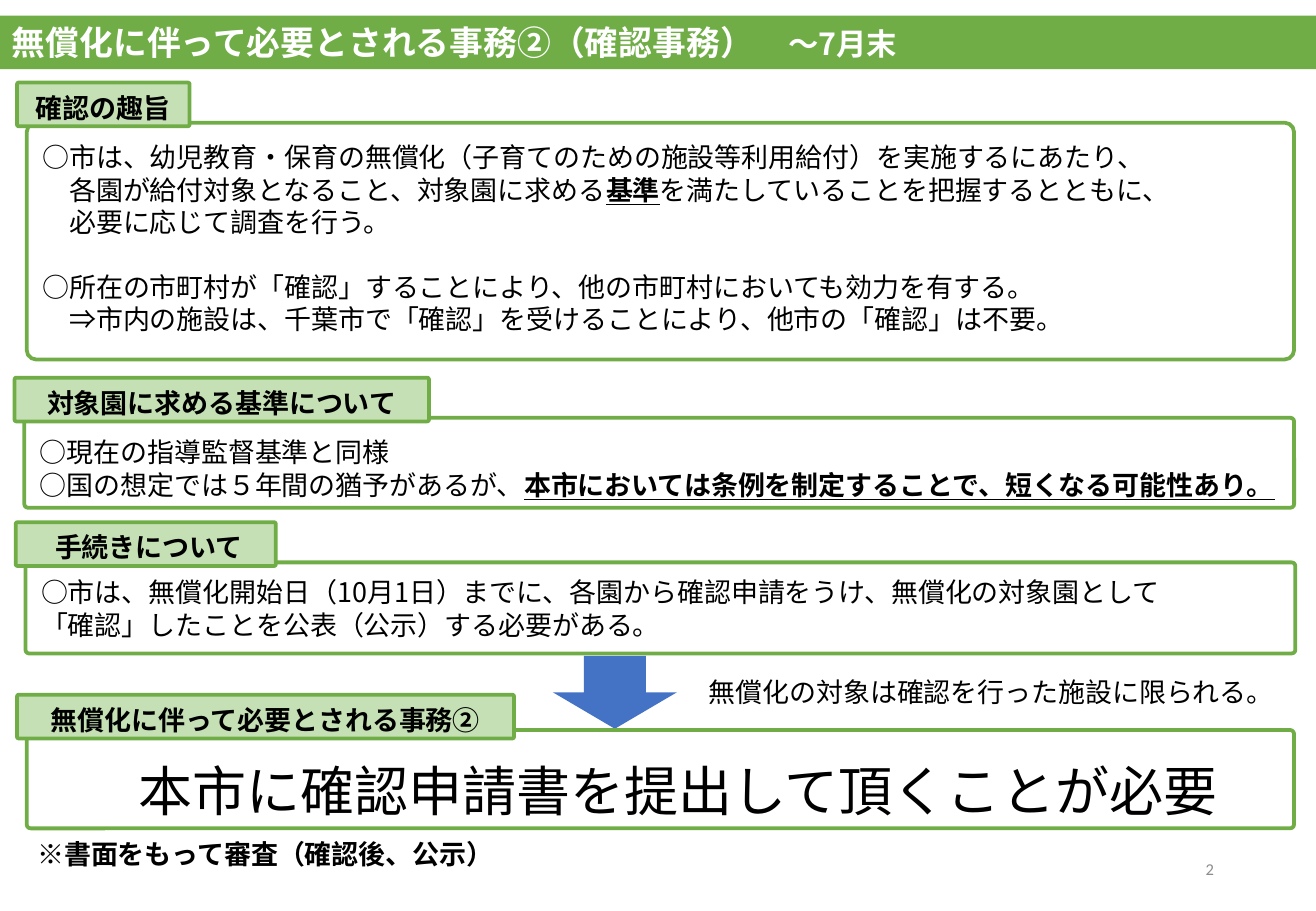
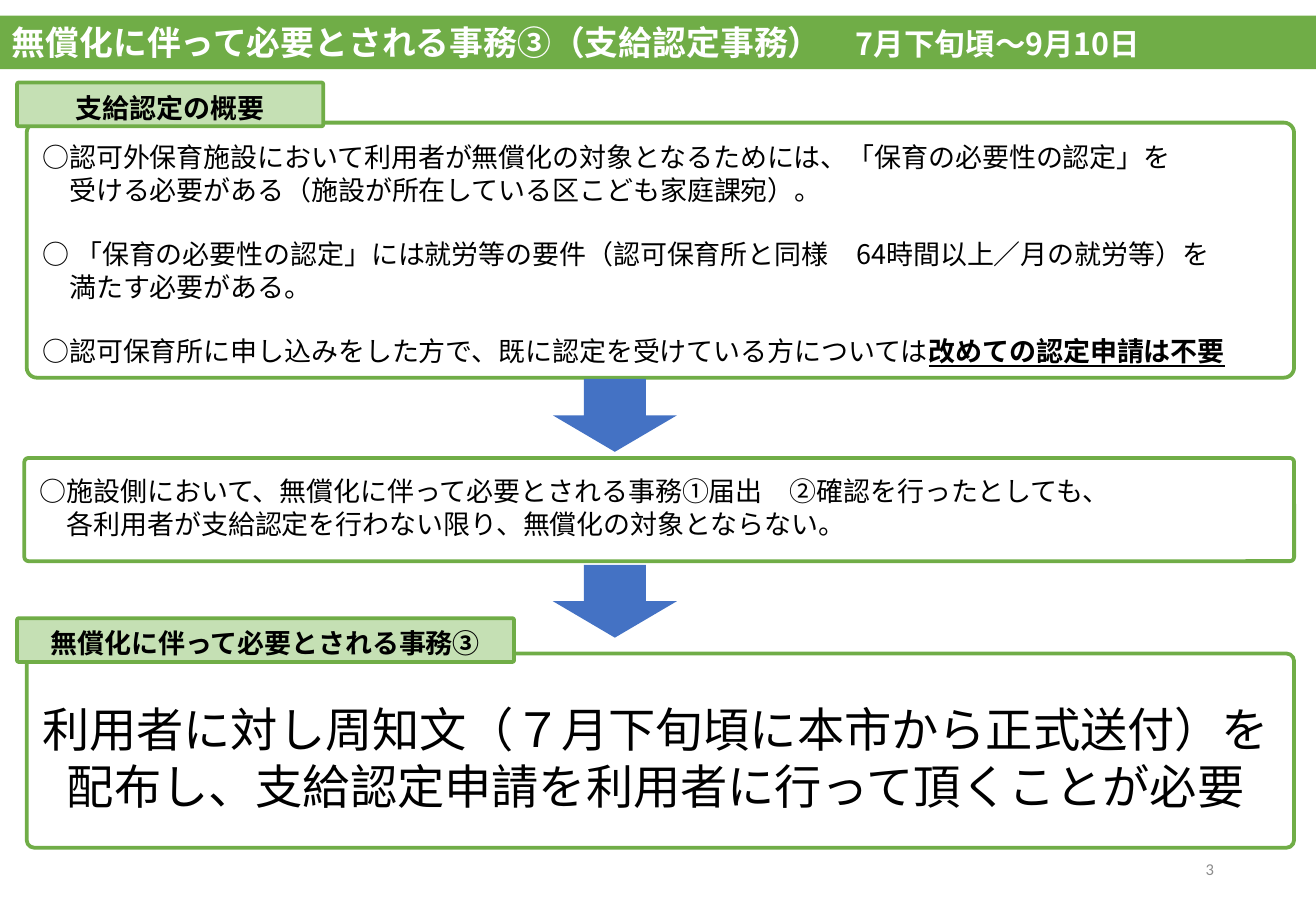
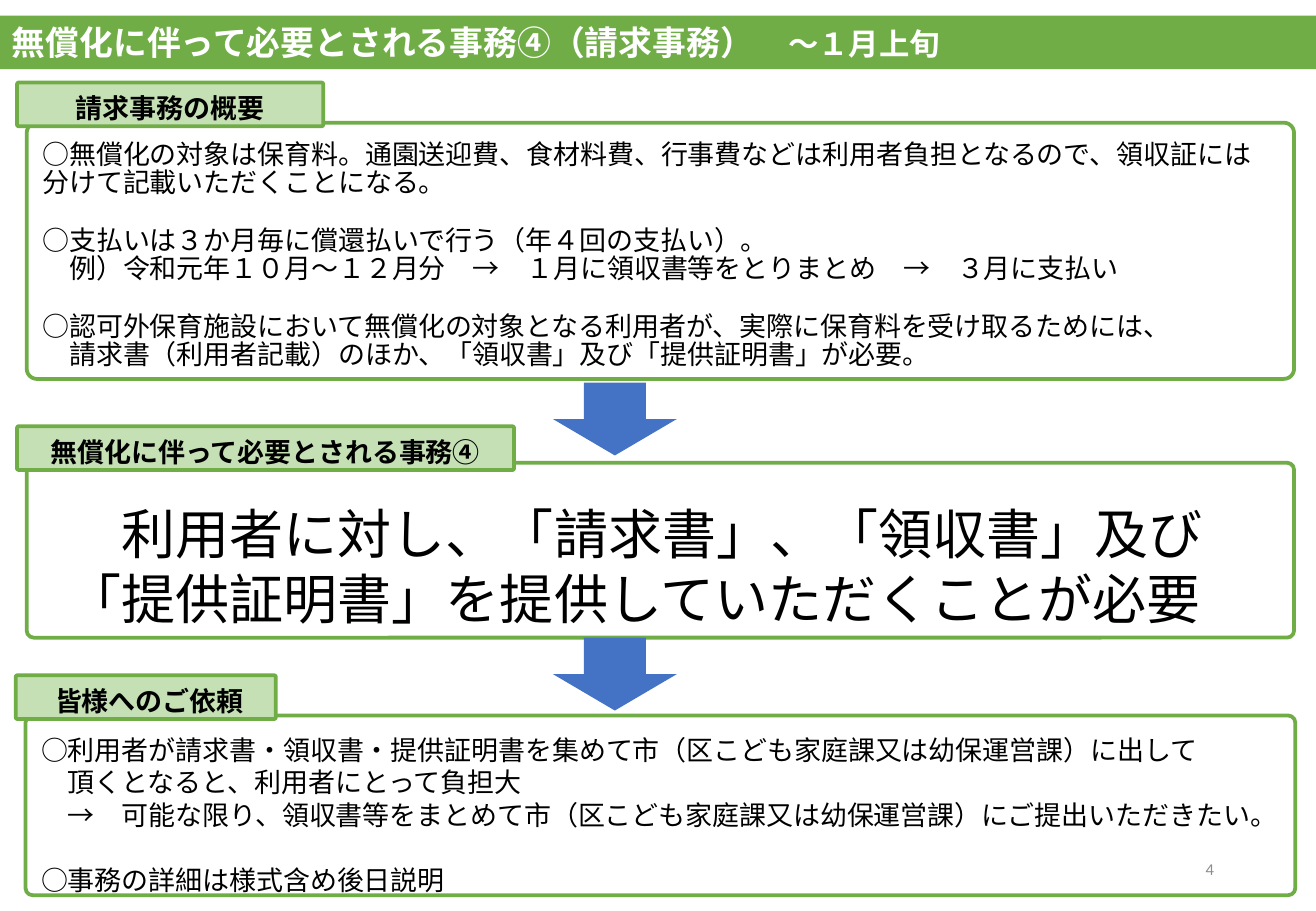
import pptx
import pptx.util
import pptx.dml.color
import pptx.enum.shapes
import pptx.enum.text
import pptx.oxml.ns
import lxml.etree

RGB = pptx.dml.color.RGBColor
SHAPE = pptx.enum.shapes.MSO_SHAPE
ALIGN = pptx.enum.text.PP_ALIGN
ANCHOR = pptx.enum.text.MSO_ANCHOR

GREEN = RGB(0x70, 0xAD, 0x47)
LIGHT_GREEN = RGB(0xC5, 0xE0, 0xB4)
BLUE = RGB(0x44, 0x72, 0xC4)
GREY = RGB(0x8C, 0x8C, 0x8C)
BLACK = RGB(0, 0, 0)
WHITE = RGB(0xFF, 0xFF, 0xFF)

FONT = "Noto Sans CJK JP"
NUMBER_FONT = "Calibri"
BODY = 16
LINE_SPACING = 1.2
SLIDE_W, SLIDE_H = 1083, 750
LABEL_H = 36
DUTY_LABEL_W = 409
PANEL = (22, 1043)
WIDE_PANEL = (20, 1045)
REQUEST_PANEL = (21, 1045)


def px(n):
    return pptx.util.Emu(n * 9144)


def place(box):
    return [px(n) for n in box]


def style(r, size, color=BLACK, bold=False, underline=False, font=FONT):
    f = r.font
    f.size = pptx.util.Pt(size)
    f.name = font
    f.color.rgb = color
    f.bold = bold
    f.underline = underline
    ea = lxml.etree.SubElement(r._r.get_or_add_rPr(), pptx.oxml.ns.qn("a:ea"))
    ea.set("typeface", font)


def add_shape(s, kind, box, fill=None, line=None, corner=None):
    sp = s.shapes.add_shape(kind, *place(box))
    sp.shadow.inherit = False
    if corner is not None:
        sp.adjustments[0] = corner
    if fill is None:
        sp.fill.background()
    else:
        sp.fill.solid()
        sp.fill.fore_color.rgb = fill
    if line is None:
        sp.line.fill.background()
    else:
        sp.line.color.rgb = line
        sp.line.width = pptx.util.Pt(2.25)
    return sp


def add_text(s, box, blocks, size=BODY, align=ALIGN.LEFT, pitch=None,
             color=BLACK, font=FONT, anchor=ANCHOR.TOP):
    tf = s.shapes.add_textbox(*place(box)).text_frame
    tf.word_wrap = True
    tf.vertical_anchor = anchor
    gap = pptx.util.Pt(pitch or size * LINE_SPACING)
    p = None
    for block in blocks:
        for i, line in enumerate(block):
            first = p is None
            p = tf.paragraphs[0] if first else tf.add_paragraph()
            p.alignment = align
            if pitch:
                p.line_spacing = pptx.util.Pt(pitch)
            if i == 0 and not first:
                p.space_before = gap
            parts = (line,) if isinstance(line, str) else line
            for k, part in enumerate(parts):
                r = p.add_run()
                r.text = part
                strong = k % 2 == 1
                style(r, size, color, strong, strong, font)


def add_title(s, title, period):
    sp = add_shape(s, SHAPE.RECTANGLE, (0, 13, SLIDE_W, 44), GREEN)
    tf = sp.text_frame
    tf.vertical_anchor = ANCHOR.MIDDLE
    p = tf.paragraphs[0]
    p.alignment = ALIGN.LEFT
    for text, size in ((title + "　", 20), (period, 18)):
        r = p.add_run()
        r.text = text
        style(r, size, WHITE, True)


def add_label(s, x, y, w, text, align=ALIGN.CENTER, framed=True):
    sp = add_shape(s, SHAPE.ROUNDED_RECTANGLE, (x, y, w, LABEL_H),
                   LIGHT_GREEN if framed else None, GREEN if framed else None, 0.04)
    tf = sp.text_frame
    tf.vertical_anchor = ANCHOR.MIDDLE
    tf.margin_left = tf.margin_right = tf.margin_top = px(10)
    tf.margin_bottom = px(5)
    p = tf.paragraphs[0]
    p.text = text
    p.alignment = align
    style(p.runs[0], BODY, bold=True)


def add_frame(s, span, y, h):
    x, w = span
    add_shape(s, SHAPE.ROUNDED_RECTANGLE, (x, y, w, h), line=GREEN, corner=0.04)


def add_panel(s, span, y, h, blocks, label=None, label_w=0,
              label_align=ALIGN.CENTER, inset=10, pitch=None):
    x, w = span
    add_frame(s, span, y, h)
    if label:
        add_label(s, x - 8, y - 33, label_w, label, label_align)
    add_text(s, (x + 3, y + inset, w + 12, h), blocks, pitch=pitch)


def add_duty(s, y, h, label, lines, size, text_x, text_w, inset,
             align=ALIGN.CENTER, rise=29):
    add_frame(s, PANEL, y, h)
    add_text(s, (text_x, y + inset, text_w, h - inset), [lines], size, align)
    add_label(s, PANEL[0] - 8, y - rise, DUTY_LABEL_W, label)


def add_arrow(s, y):
    add_shape(s, SHAPE.DOWN_ARROW, (455, y, 102, 60), BLUE)


def add_number(s, number):
    add_text(s, (765, 695, 244, 40), [[str(number)]], 9.8, ALIGN.RIGHT,
             color=GREY, font=NUMBER_FONT, anchor=ANCHOR.MIDDLE)


def confirmation_slide(s):
    add_title(s, "無償化に伴って必要とされる事務②（確認事務）", "～7月末")
    add_panel(s, PANEL, 101, 195, [
        ["○市は、幼児教育・保育の無償化（子育てのための施設等利用給付）を実施するにあたり、",
         ("　各園が給付対象となること、対象園に求める", "基準",
          "を満たしていることを把握するとともに、"),
         "　必要に応じて調査を行う。"],
        ["○所在の市町村が「確認」することにより、他の市町村においても効力を有する。",
         "　⇒市内の施設は、千葉市で「確認」を受けることにより、他市の「確認」は不要。"],
    ], "確認の趣旨", 142)
    add_panel(s, WIDE_PANEL, 344, 74, [
        ["○現在の指導監督基準と同様",
         ("○国の想定では５年間の猶予があるが、",
          "本市においては条例を制定することで、短くなる可能性あり。")],
    ], "対象園に求める基準について", 341)
    add_panel(s, REQUEST_PANEL, 463, 75, [
        ["○市は、無償化開始日（10月1日）までに、各園から確認申請をうけ、無償化の対象園として",
         "「確認」したことを公表（公示）する必要がある。"],
    ], "　手続きについて", 214, ALIGN.LEFT, inset=6)
    add_arrow(s, 540)
    add_text(s, (564, 551, 504, 37),
             [["無償化の対象は確認を行った施設に限られる。"]], align=ALIGN.CENTER)
    add_duty(s, 601, 81, "無償化に伴って必要とされる事務②",
             ["本市に確認申請書を提出して頂くことが必要"], 32, 79, 958, 18)
    add_number(s, 2)
    add_label(s, 14, 682, DUTY_LABEL_W, "※書面をもって審査（確認後、公示）", framed=False)


def certification_slide(s):
    add_title(s, "無償化に伴って必要とされる事務③（支給認定事務）", "7月下旬頃～9月10日")
    add_panel(s, PANEL, 101, 210, [
        ["○認可外保育施設において利用者が無償化の対象となるためには、「保育の必要性の認定」を",
         "　受ける必要がある（施設が所在している区こども家庭課宛）。"],
        ["○ 「保育の必要性の認定」には就労等の要件（認可保育所と同様　64時間以上／月の就労等）を",
         "　満たす必要がある。"],
        [("○認可保育所に申し込みをした方で、既に認定を受けている方については",
          "改めての認定申請は不要")],
    ], "支給認定の概要", 252)
    add_arrow(s, 312)
    add_panel(s, WIDE_PANEL, 377, 85, [
        ["○施設側において、無償化に伴って必要とされる事務①届出　②確認を行ったとしても、",
         "　各利用者が支給認定を行わない限り、無償化の対象とならない。"],
    ], inset=9)
    add_arrow(s, 465)
    add_duty(s, 538, 160, "無償化に伴って必要とされる事務③",
             ["利用者に対し周知文（７月下旬頃に本市から正式送付）を"
              "配布し、支給認定申請を利用者に行って頂くことが必要"], 28, 20, 1039, 34)
    add_number(s, 3)


def billing_slide(s):
    add_title(s, "無償化に伴って必要とされる事務④（請求事務）", "～１月上旬")
    add_panel(s, PANEL, 101, 211, [
        ["○無償化の対象は保育料。通園送迎費、食材料費、行事費などは利用者負担となるので、領収証には",
         "分けて記載いただくことになる。"],
        ["○支払いは３か月毎に償還払いで行う（年４回の支払い）。",
         "　例）令和元年１０月～１２月分　→　１月に領収書等をとりまとめ　→　３月に支払い"],
        ["○認可外保育施設において無償化の対象となる利用者が、実際に保育料を受け取るためには、",
         "　請求書（利用者記載）のほか、「領収書」及び「提供証明書」が必要。"],
    ], "請求事務の概要", 252, pitch=17)
    add_arrow(s, 315)
    add_duty(s, 381, 144, "無償化に伴って必要とされる事務④",
             ["　利用者に対し、「請求書」、「領収書」及び",
              "「提供証明書」を提供していただくことが必要"],
             32, 46, 1020, 26, ALIGN.LEFT, rise=30)
    add_arrow(s, 525)
    add_panel(s, REQUEST_PANEL, 589, 148, [
        ["○利用者が請求書・領収書・提供証明書を集めて市（区こども家庭課又は幼保運営課）に出して",
         "　頂くとなると、利用者にとって負担大",
         "　→　可能な限り、領収書等をまとめて市（区こども家庭課又は幼保運営課）にご提出いただきたい。"],
        ["○事務の詳細は様式含め後日説明"],
    ], "　皆様へのご依頼", 214, ALIGN.LEFT)
    add_number(s, 4)


def main():
    prs = pptx.Presentation()
    prs.slide_width = px(SLIDE_W)
    prs.slide_height = px(SLIDE_H)
    for build in (confirmation_slide, certification_slide, billing_slide):
        build(prs.slides.add_slide(prs.slide_layouts[6]))
    prs.save("out.pptx")


if __name__ == "__main__":
    main()
